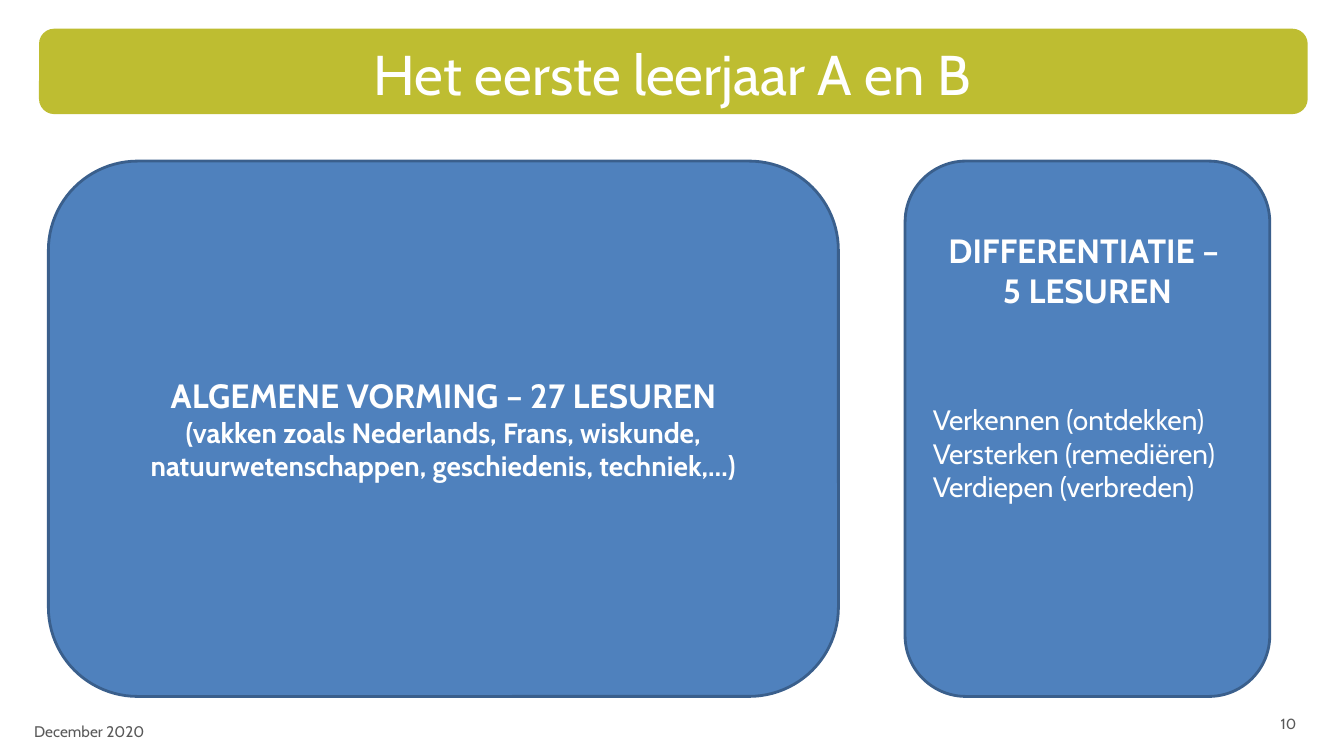
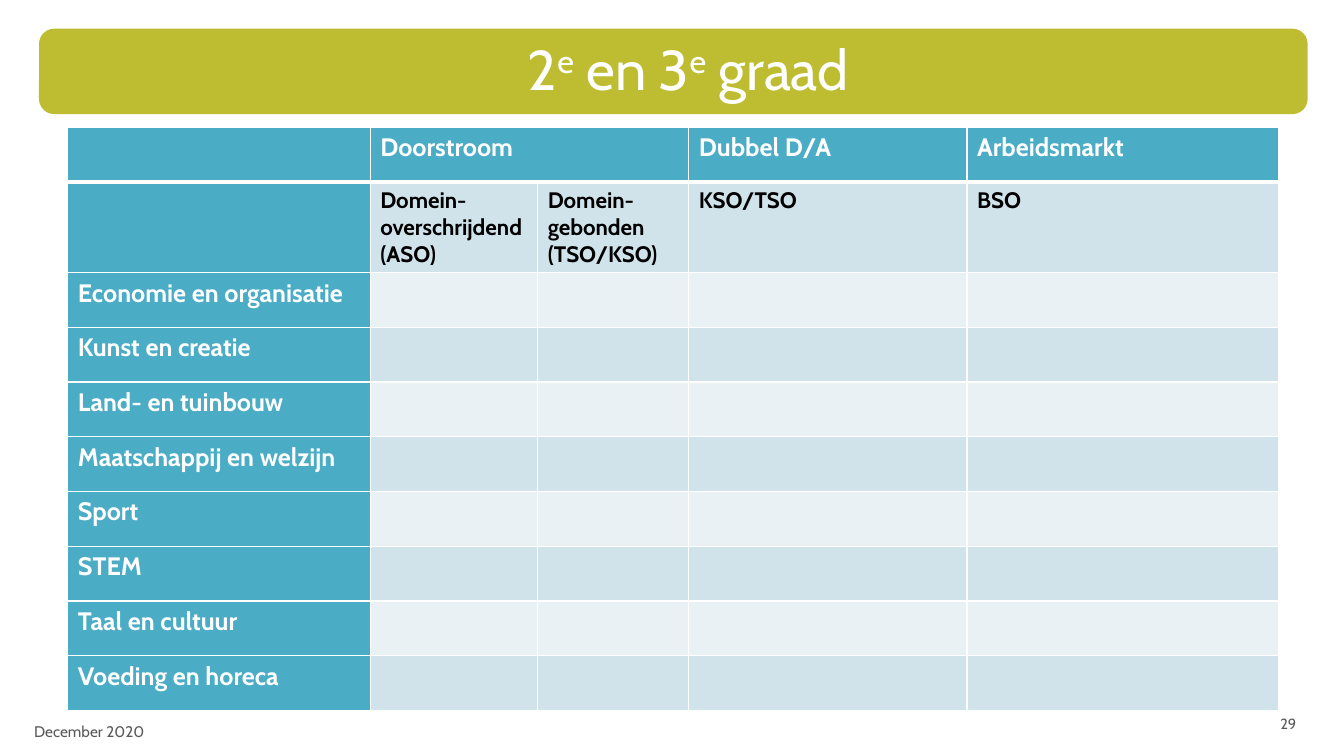
import dataclasses

import pptx
import pptx.dml.color
import pptx.enum.shapes
import pptx.enum.text
import pptx.oxml
import pptx.oxml.ns
import pptx.util

Cm = pptx.util.Cm
Pt = pptx.util.Pt
ALIGN = pptx.enum.text.PP_ALIGN
ANCHOR = pptx.enum.text.MSO_ANCHOR


@dataclasses.dataclass(frozen=True)
class Theme:
    font: str = "Cabin"
    white: str = "FFFFFF"
    black: str = "000000"
    band: str = "BEBD31"
    panel: str = "4F81BD"
    panel_line: str = "3A5F8C"
    header: str = "4BACC6"
    row_dark: str = "D0E3EA"
    row_light: str = "E9F1F5"
    footer: str = "595959"
    title_size: float = 40
    heading_size: float = 24
    body_size: float = 20
    table_size: float = 18
    subheader_size: float = 16
    date_size: float = 11
    number_size: float = 10.5


@dataclasses.dataclass(frozen=True)
class Line:
    """One paragraph of a panel."""
    text: str
    size: float
    bold: bool = True
    alignment: ALIGN = ALIGN.CENTER
    space_before: float = 0


THEME = Theme()
DATE = "December 2020"
DOMAINS = (
    "Economie en organisatie", "Kunst en creatie", "Land- en tuinbouw",
    "Maatschappij en welzijn", "Sport", "STEM", "Taal en cultuur",
    "Voeding en horeca",
)


def rgb(value):
    return pptx.dml.color.RGBColor.from_string(value)


def style_runs(paragraph, size, color, bold=False):
    for run in paragraph.runs:
        run.font.name = THEME.font
        run.font.size = Pt(size)
        run.font.bold = bold
        run.font.color.rgb = rgb(color)


def add_rounded_box(slide, box, fill, line):
    shape = slide.shapes.add_shape(
        pptx.enum.shapes.MSO_SHAPE.ROUNDED_RECTANGLE, *map(Cm, box))
    shape.shadow.inherit = False
    shape.fill.solid()
    shape.fill.fore_color.rgb = rgb(fill)
    shape.line.color.rgb = rgb(line)
    shape.line.width = Pt(2)
    return shape


def add_text(slide, box, parts, size, color, alignment, anchor=ANCHOR.MIDDLE):
    """Add one paragraph; every second part is superscript."""
    text_frame = slide.shapes.add_textbox(*map(Cm, box)).text_frame
    text_frame.word_wrap = True
    text_frame.vertical_anchor = anchor
    paragraph = text_frame.paragraphs[0]
    paragraph.alignment = alignment
    for index, part in enumerate(parts):
        run = paragraph.add_run()
        run.text = part
        if index % 2:
            run._r.get_or_add_rPr().set("baseline", "30000")
    style_runs(paragraph, size, color)


def add_framed_slide(presentation, title_parts, title_box, number):
    """Add a blank slide with title band, date and slide number."""
    slide = presentation.slides.add_slide(presentation.slide_layouts[6])
    add_rounded_box(slide, (1.02, 0.76, 31.9, 2.08), THEME.band, THEME.band)
    add_text(slide, title_box, title_parts, THEME.title_size, THEME.white,
             ALIGN.CENTER, ANCHOR.TOP)
    add_text(slide, (0.61, 17.93, 8.66, 1.02), [DATE], THEME.date_size,
             THEME.footer, ALIGN.LEFT)
    add_text(slide, (25.1, 17.73, 7.82, 1.02), [str(number)],
             THEME.number_size, THEME.footer, ALIGN.RIGHT)
    return slide


def add_panel(slide, box, lines, top_margin=None):
    """Add a panel, centred vertically unless a top margin is given."""
    shape = add_rounded_box(slide, box, THEME.panel, THEME.panel_line)
    text_frame = shape.text_frame
    text_frame.word_wrap = True
    text_frame.vertical_anchor = ANCHOR.MIDDLE
    if top_margin is not None:
        text_frame.vertical_anchor = ANCHOR.TOP
        text_frame.margin_top = Cm(top_margin)
    text_frame.text = "\n".join(line.text for line in lines)
    for paragraph, line in zip(text_frame.paragraphs, lines):
        paragraph.alignment = line.alignment
        if line.space_before:
            paragraph.space_before = Pt(line.space_before)
        style_runs(paragraph, line.size, THEME.white, line.bold)


def set_borders(cell, top, bottom):
    """Draw white borders; the side lines are 1 pt wide."""
    properties = cell._tc.get_or_add_tcPr()
    widths = {"lnL": 1, "lnR": 1, "lnT": top, "lnB": bottom}
    for index, (tag, width) in enumerate(widths.items()):
        properties.insert(index, pptx.oxml.parse_xml(
            f'<a:{tag} {pptx.oxml.ns.nsdecls("a")} w="{Pt(width)}">'
            f'<a:solidFill><a:srgbClr val="{THEME.white}"/></a:solidFill>'
            f'</a:{tag}>'))


def cell_look(row, column):
    """Return fill, text colour and text size for a table position."""
    if row == 0 or column == 0:
        return THEME.header, THEME.white, THEME.table_size
    fill = THEME.row_dark if row % 2 else THEME.row_light
    return fill, THEME.black, THEME.subheader_size


def add_domain_table(slide, left, top):
    column_widths = (7.62, 4.22, 3.81, 7.01, 7.85)
    row_heights = (1.38, 2.29) + (1.38,) * len(DOMAINS)
    rows = [
        ("", "Doorstroom", "", "Dubbel D/A", "Arbeidsmarkt"),
        ("", "Domein-overschrijdend (ASO)", "Domein-gebonden (TSO/KSO)",
         "KSO/TSO", "BSO"),
    ] + [(domain, "", "", "", "") for domain in DOMAINS]
    table = slide.shapes.add_table(
        len(rows), len(column_widths), Cm(left), Cm(top),
        Cm(sum(column_widths)), Cm(sum(row_heights))).table
    table.horz_banding = False
    for column, width in zip(table.columns, column_widths):
        column.width = Cm(width)
    for row, height in zip(table.rows, row_heights):
        row.height = Cm(height)
    for row_index, texts in enumerate(rows):
        for column_index, text in enumerate(texts):
            cell = table.cell(row_index, column_index)
            fill, color, size = cell_look(row_index, column_index)
            cell.fill.solid()
            cell.fill.fore_color.rgb = rgb(fill)
            set_borders(cell, top=3 if row_index == 1 else 1,
                        bottom=3 if row_index == 0 else 1)
            if text:
                cell.text_frame.text = text
                style_runs(cell.text_frame.paragraphs[0], size, color, True)
    table.cell(0, 1).merge(table.cell(0, 2))


def build_first_year_slide(presentation):
    slide = add_framed_slide(presentation, ["Het eerste leerjaar A en B"],
                             (1.7, 0.86, 30.48, 1.75), 10)
    panel_top, panel_height = 4.06, 13.49
    add_panel(slide, (1.22, panel_top, 19.91, panel_height), [
        Line("ALGEMENE VORMING – 27 LESUREN", THEME.heading_size),
        Line("(vakken zoals Nederlands, Frans, wiskunde, "
             "natuurwetenschappen, geschiedenis, techniek,…)",
             THEME.body_size),
    ])
    add_panel(slide, (22.81, panel_top, 9.19, panel_height), [
        Line("DIFFERENTIATIE – ", THEME.heading_size),
        Line("5 LESUREN", THEME.heading_size),
        Line("Verkennen (ontdekken)", THEME.body_size, False, ALIGN.LEFT, 66),
        Line("Versterken (remediëren)", THEME.body_size, False, ALIGN.LEFT),
        Line("Verdiepen (verbreden)", THEME.body_size, False, ALIGN.LEFT),
    ], top_margin=1.28)


def build_domains_slide(presentation):
    slide = add_framed_slide(presentation, ["2", "e", " en 3", "e", " graad"],
                             (2.11, 0.74, 30.48, 1.75), 29)
    add_domain_table(slide, 1.71, 3.2)


def main():
    presentation = pptx.Presentation()
    presentation.slide_width = Cm(33.87)
    presentation.slide_height = Cm(19.05)
    build_first_year_slide(presentation)
    build_domains_slide(presentation)
    presentation.save("out.pptx")


if __name__ == "__main__":
    main()
